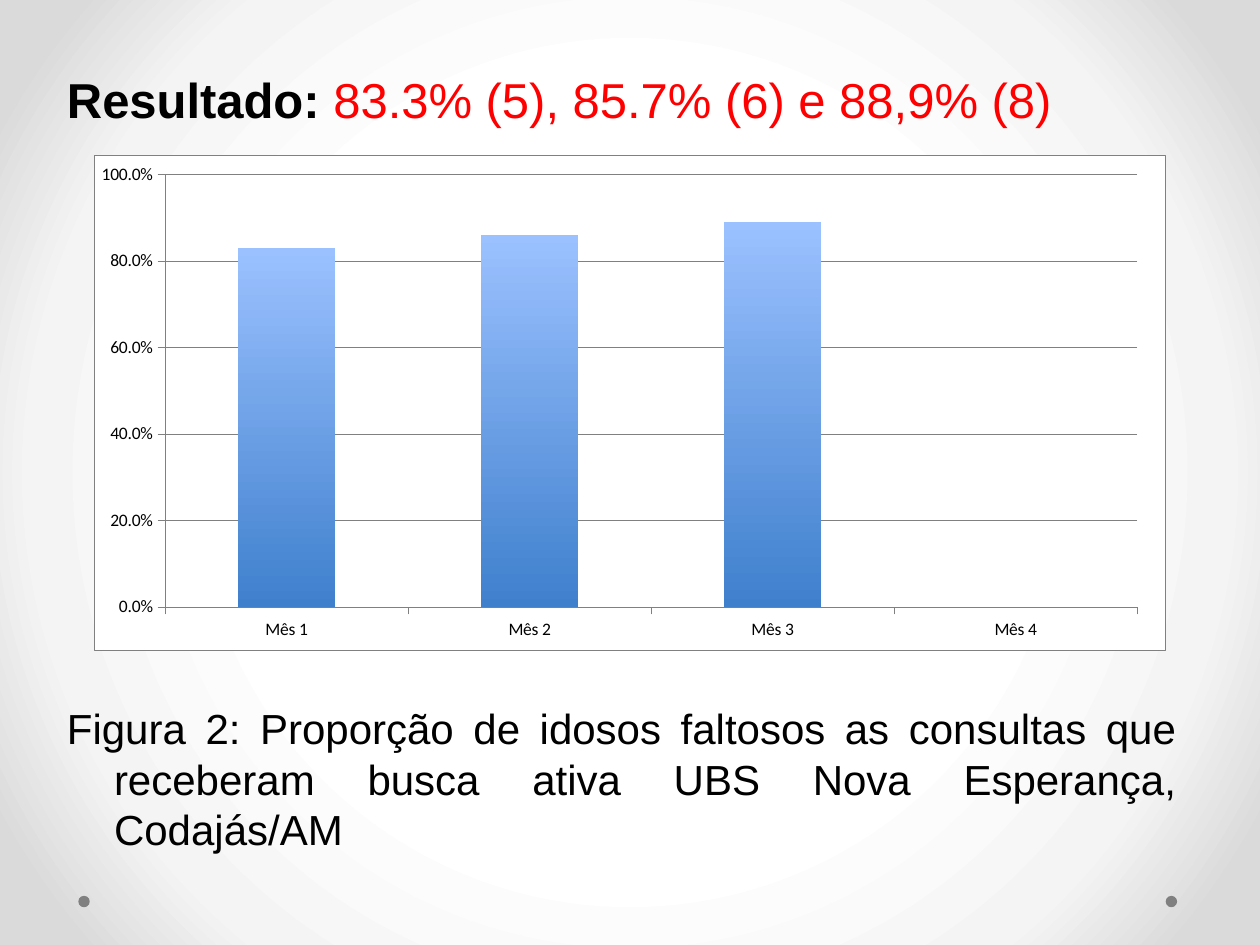
import lxml.etree
import pptx
import pptx.chart.data
import pptx.dml.color
import pptx.enum.chart
import pptx.enum.shapes
import pptx.enum.text
import pptx.oxml
import pptx.oxml.ns
import pptx.util

Cm, Pt = pptx.util.Cm, pptx.util.Pt
NS = " ".join(pptx.oxml.ns.nsdecls(n) for n in ("a", "c"))


def rgb(value):
    """Turn a hex string into a colour."""
    return pptx.dml.color.RGBColor.from_string(value)


def apply(obj, values):
    """Set every attribute named in a dict."""
    for name, value in values.items():
        setattr(obj, name, value)


def draw_background(s):
    """Fill the slide with a radial white to grey gradient."""
    s.background.fill.gradient()
    old = s._element.xpath(".//p:bg//a:gradFill")[0]
    stops = "".join(
        f'<a:gs pos="{pos}000"><a:srgbClr val="{color}"/></a:gs>'
        for pos, color in ((50, "FFFFFF"), (76, "F4F4F4"), (92, "DADADA")))
    new = pptx.oxml.parse_xml(
        f'<a:gradFill {NS} rotWithShape="1"><a:gsLst>{stops}</a:gsLst>'
        '<a:path path="circle"><a:fillToRect l="50000" t="50000" r="50000" b="50000"/>'
        '</a:path></a:gradFill>')
    old.getparent().replace(old, new)


def draw_dots(s, x, y, w, h):
    """Place a grey dot at each end of the footer strip."""
    for left in (x, x + w - h):
        sp = s.shapes.add_shape(pptx.enum.shapes.MSO_SHAPE.OVAL,
                                Cm(left), Cm(y), Cm(h), Cm(h))
        sp.shadow.inherit = False
        sp.fill.solid()
        sp.fill.fore_color.rgb = rgb("808080")
        sp.line.fill.background()


def draw_text(s, x, y, w, h, runs, size, frame, para):
    """Write one paragraph of (text, colour, bold) runs in a box."""
    tf = s.shapes.add_textbox(Cm(x), Cm(y), Cm(w), Cm(h)).text_frame
    apply(tf, {"word_wrap": True, **frame})
    p = tf.paragraphs[0]
    apply(p, para)
    for text, color, bold in runs:
        r = p.add_run()
        r.text = text
        apply(r.font, {"name": "Arial", "size": Pt(size), "bold": bold})
        r.font.color.rgb = rgb(color)
    return p


def draw_title(s, x, y, w, h):
    """Write the result line at the bottom of its box."""
    draw_text(s, x, y, w, h,
              [("Resultado: ", "000000", True),
               ("83.3% (5), 85.7% (6) e 88,9% (8)", "FF0000", False)], 28,
              {"vertical_anchor": pptx.enum.text.MSO_ANCHOR.BOTTOM},
              {"line_spacing": Pt(58)})


def draw_caption(s, x, y, w, h):
    """Write the justified figure caption with a hanging indent."""
    p = draw_text(s, x, y, w, h,
                  [("Figura 2: Proporção de idosos faltosos as consultas que receberam "
                    "busca ativa UBS Nova Esperança, Codajás/AM", "000000", False)], 24, {},
                  {"alignment": pptx.enum.text.PP_ALIGN.JUSTIFY})
    indent = Cm(0.95)
    for name, value in {"marL": indent, "indent": -indent}.items():
        p._p.get_or_add_pPr().set(name, str(int(value)))


def style_chart_areas(chart):
    """Set the white areas, the border and the inner plot position."""
    white = '<a:solidFill><a:srgbClr val="FFFFFF"/></a:solidFill>'
    border = '<a:ln w="3175"><a:solidFill><a:srgbClr val="808080"/></a:solidFill></a:ln>'
    space = chart._chartSpace
    space.find(pptx.oxml.ns.qn("c:chart")).addnext(
        pptx.oxml.parse_xml(f"<c:spPr {NS}>{white}{border}</c:spPr>"))
    area = space.xpath(".//c:plotArea")[0]
    for old in area.xpath("./c:layout"):
        area.remove(old)
    modes = '<c:xMode val="edge"/><c:yMode val="edge"/>'
    place = "".join(f'<c:{k} val="{v}"/>' for k, v in
                    {"x": 0.066, "y": 0.039, "w": 0.908, "h": 0.873}.items())
    area.insert(0, pptx.oxml.parse_xml(
        f'<c:layout {NS}><c:manualLayout><c:layoutTarget val="inner"/>'
        f'{modes}{place}</c:manualLayout></c:layout>'))
    area.append(pptx.oxml.parse_xml(
        f"<c:spPr {NS}>{white}<a:ln><a:noFill/></a:ln></c:spPr>"))


def draw_chart(s, x, y, w, h):
    """Draw the monthly proportions as gradient columns."""
    data = pptx.chart.data.CategoryChartData(number_format="0.0%")
    data.categories = [f"Mês {n}" for n in range(1, 5)]
    data.add_series("Series 1", (0.83, 0.86, 0.89, 0))
    chart = s.shapes.add_chart(pptx.enum.chart.XL_CHART_TYPE.COLUMN_CLUSTERED,
                               Cm(x), Cm(y), Cm(w), Cm(h), data).chart
    apply(chart, {"has_legend": False, "has_title": False})
    style_chart_areas(chart)
    apply(chart.font, {"name": "Calibri", "size": Pt(10)})
    chart.font.color.rgb = rgb("000000")

    cat, val = chart.category_axis, chart.value_axis
    apply(val, {"minimum_scale": 0, "maximum_scale": 1, "major_unit": 0.2,
                "has_major_gridlines": True})
    apply(val.tick_labels, {"number_format": "0.0%", "number_format_is_linked": False})
    for axis in (cat, val):
        axis.major_tick_mark = pptx.enum.chart.XL_TICK_MARK.OUTSIDE
    for part in (cat, val, val.major_gridlines):
        part.format.line.width = Pt(0.25)
        part.format.line.color.rgb = rgb("808080")

    plot = chart.plots[0]
    apply(plot, {"gap_width": 150, "vary_by_categories": False})
    fill = plot.series[0].format.fill
    fill.gradient()
    fill.gradient_angle = 270
    for stop, position, color in zip(fill.gradient_stops, (0, 1), ("9BC1FF", "3F80CD")):
        stop.position = position
        stop.color.rgb = rgb(color)


def main():
    """Build the slide and save it."""
    prs = pptx.Presentation()
    apply(prs, {"slide_width": Cm(25.4), "slide_height": Cm(19.05)})
    s = prs.slides.add_slide(prs.slide_layouts[6])
    draw_background(s)
    draw_dots(s, 1.58, 18.06, 22.15, 0.23)
    draw_title(s, 1.1, 0.05, 22.86, 2.67)
    draw_caption(s, 1.1, 14.04, 22.86, 3.8)
    draw_chart(s, 1.9, 3.12, 21.59, 10)
    prs.save("out.pptx")


if __name__ == "__main__":
    main()
